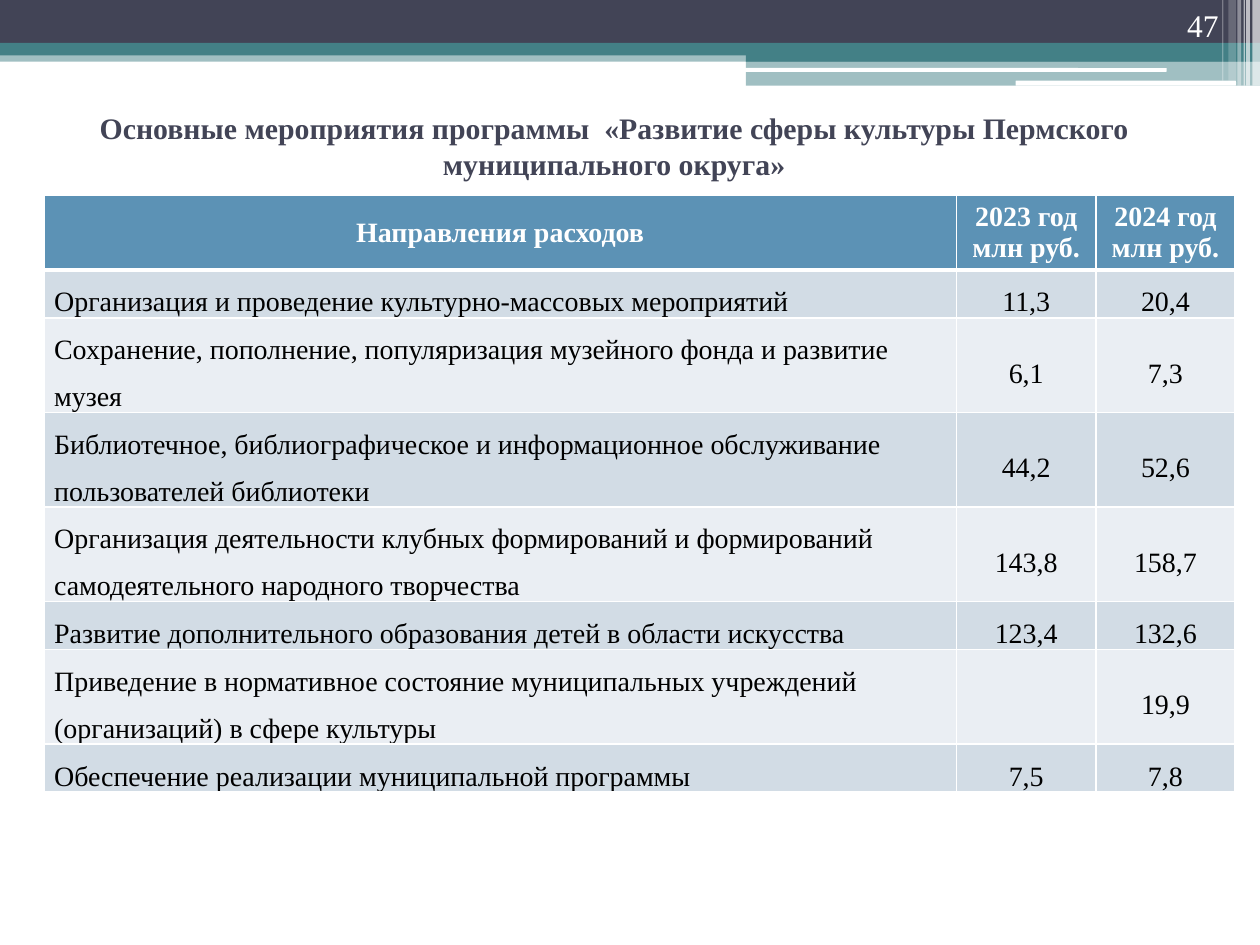
from lxml import etree
from pptx import Presentation
from pptx.dml.color import RGBColor
from pptx.enum.shapes import MSO_SHAPE as SHAPE
from pptx.enum.text import MSO_ANCHOR as ANCHOR, PP_ALIGN as ALIGN
from pptx.oxml.ns import qn
from pptx.util import Inches, Pt

COLORS = {
    "navy": "424456", "teal": "438086", "white": "FFFFFF", "black": "000000",
    "header": "5C92B5", "band_dark": "D2DCE5", "band_light": "EAEEF3",
}
FONT = "Times New Roman"


def style_text(frame, size, color, align, bold=False, spacing=None):
    for paragraph in frame.paragraphs:
        paragraph.alignment = align
        paragraph.line_spacing = spacing
        font = paragraph.font
        font.size, font.name, font.bold = Pt(size), FONT, bold
        font.color.rgb = RGBColor.from_string(COLORS[color])
        for run in paragraph.runs:
            run.font.size, run.font.name, run.font.bold = Pt(size), FONT, bold
            run.font.color.rgb = RGBColor.from_string(COLORS[color])


def add_border(cell, side, width):
    line = etree.SubElement(cell._tc.get_or_add_tcPr(), qn(f"a:{side}"), w=str(Pt(width)))
    fill = etree.SubElement(line, qn("a:solidFill"))
    etree.SubElement(fill, qn("a:srgbClr"), val=COLORS["white"])


prs = Presentation()
prs.slide_width, prs.slide_height = Inches(10), Inches(7.5)
slide = prs.slides.add_slide(prs.slide_layouts[6])

# Top banner: left, top, width, height, colour, opacity in percent, shape
bands = [
    (0, 0.4, 10, 0.09, "teal", 50, SHAPE.RECTANGLE),
    (0, 0, 10, 0.34, "navy", 100, SHAPE.RECTANGLE),
    (0, 0.34, 10, 0.1, "teal", 100, SHAPE.RECTANGLE),
    (5.92, 0.39, 4.08, 0.1, "teal", 100, SHAPE.RECTANGLE),
    (5.92, 0.48, 4.08, 0.2, "teal", 50, SHAPE.RECTANGLE),
    (5.91, 0.54, 3.35, 0.03, "white", 100, SHAPE.ROUNDED_RECTANGLE),
    (8.06, 0.64, 1.75, 0.04, "white", 100, SHAPE.ROUNDED_RECTANGLE),
]
# Vertical stripes at the right edge: left, width, height, opacity
stripes = [
    (9.94, 0.06, 0.68, 65), (9.89, 0.03, 0.68, 65), (9.87, 0.01, 0.68, 60),
    (9.82, 0.03, 0.68, 40), (9.75, 0.06, 0.64, 20), (9.7, 0.01, 0.64, 30),
]
bands += [(left, 0, width, height, "white", opacity, SHAPE.RECTANGLE)
          for left, width, height, opacity in stripes]
for left, top, width, height, color, opacity, kind in bands:
    band = slide.shapes.add_shape(kind, Inches(left), Inches(top), Inches(width), Inches(height))
    band.shadow.inherit = False
    band.line.fill.background()
    band.fill.solid()
    band.fill.fore_color.rgb = RGBColor.from_string(COLORS[color])
    if opacity < 100:
        rgb = band._element.spPr.find(qn("a:solidFill")).find(qn("a:srgbClr"))
        etree.SubElement(rgb, qn("a:alpha"), val=str(opacity * 1000))

# Expenses table
expenses = [
    ("Направления расходов", "2023 год\nмлн руб.", "2024 год\nмлн руб."),
    ("Организация и проведение культурно-массовых мероприятий", "11,3", "20,4"),
    ("Сохранение, пополнение, популяризация музейного фонда и развитие музея", "6,1", "7,3"),
    ("Библиотечное, библиографическое и информационное обслуживание пользователей библиотеки",
     "44,2", "52,6"),
    ("Организация деятельности клубных формирований и формирований самодеятельного "
     "народного творчества", "143,8", "158,7"),
    ("Развитие дополнительного образования детей в области искусства", "123,4", "132,6"),
    ("Приведение в нормативное состояние муниципальных учреждений (организаций) "
     "в сфере культуры", "", "19,9"),
    ("Обеспечение реализации муниципальной программы", "7,5", "7,8"),
]
column_widths = [7.24, 1.11, 1.1]
row_heights = [0.59, 0.38, 0.75, 0.75, 0.75, 0.38, 0.75, 0.38]
table = slide.shapes.add_table(
    len(expenses), len(column_widths), Inches(0.35), Inches(1.55),
    Inches(sum(column_widths)), Inches(sum(row_heights))).table
for column, width in zip(table.columns, column_widths):
    column.width = Inches(width)
for row, height in zip(table.rows, row_heights):
    row.height = Inches(height)

for r, values in enumerate(expenses):
    for c, value in enumerate(values):
        cell = table.cell(r, c)
        cell.text_frame.text = value
        cell.vertical_anchor = ANCHOR.MIDDLE
        if r == 0:
            fill_color = "header"
            style_text(cell.text_frame, 16, "white", ALIGN.CENTER, bold=True)
        else:
            fill_color = "band_dark" if r % 2 else "band_light"
            cell.margin_left = Inches(0.01 if c else 0.08)
            cell.margin_right = cell.margin_top = Inches(0.01)
            cell.margin_bottom = Inches(0)
            style_text(cell.text_frame, 16, "black", ALIGN.CENTER if c else ALIGN.LEFT,
                       spacing=1.5)
        # Borders come before the fill; the header is set off by a thicker line
        add_border(cell, "lnL", 1)
        add_border(cell, "lnR", 1)
        add_border(cell, "lnT", 3 if r == 1 else 1)
        add_border(cell, "lnB", 3 if r == 0 else 1)
        cell.fill.solid()
        cell.fill.fore_color.rgb = RGBColor.from_string(COLORS[fill_color])

# Page number
page_number = slide.shapes.add_textbox(Inches(8.94), Inches(0), Inches(0.83), Inches(0.4))
page_number.text_frame.word_wrap = True
page_number.text_frame.vertical_anchor = ANCHOR.BOTTOM
page_number.text_frame.text = "47"
style_text(page_number.text_frame, 18, "white", ALIGN.RIGHT)

# Title
title = slide.shapes.add_textbox(Inches(0.67), Inches(0.92), Inches(8.41), Inches(0.47))
title.text_frame.word_wrap = True
title.text_frame.vertical_anchor = ANCHOR.MIDDLE
title.text_frame.text = ("Основные мероприятия программы  «Развитие сферы культуры "
                         "Пермского муниципального округа»")
style_text(title.text_frame, 17, "navy", ALIGN.CENTER, bold=True)

prs.save("out.pptx")
